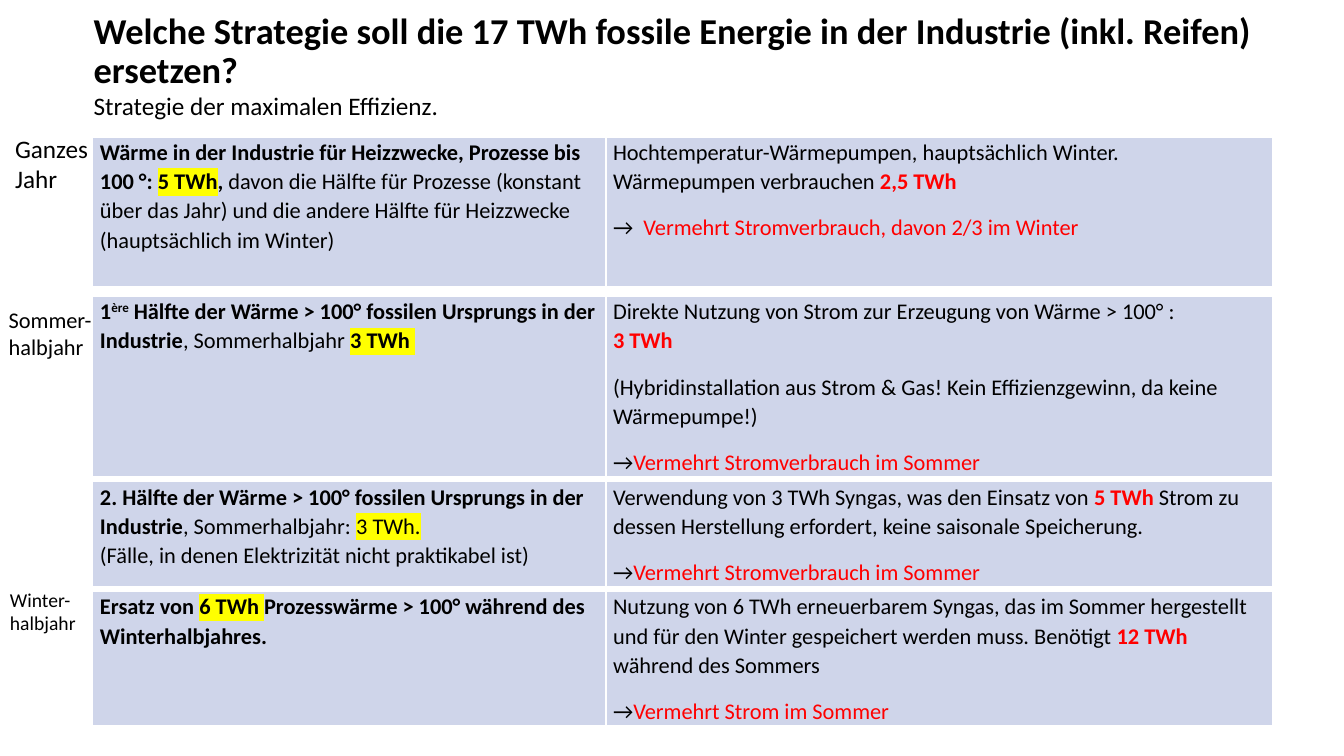
from typing import NamedTuple

from lxml.etree import SubElement as Sub
from pptx import Presentation
from pptx.dml.color import RGBColor as Rgb
from pptx.enum.text import MSO_ANCHOR as Anchor, MSO_AUTO_SIZE as Auto
from pptx.oxml.ns import qn
from pptx.util import Cm, Pt

FONT = "Calibri"
COLORS = {"text": "000000", "accent": "FF0000", "mark": "FFFF00",
          "cell": "CFD5EA", "line": "FFFFFF"}
LEFT = 2.34
WIDTHS = (12.93, 16.79)


class Label(NamedTuple):
    text: str
    left: float
    top: float
    width: float
    height: float
    size: int
    title: bool = False


class Part(NamedTuple):
    text: str
    bold: bool = False
    red: bool = False
    mark: bool = False
    raised: bool = False


class Block(NamedTuple):
    top: float
    height: float
    row: float
    cells: tuple


def arrow(text: str, sign: str = "→") -> list:
    return [Part(sign), Part(text, red=True)]


LABELS = [
    Label("Welche Strategie soll die 17 TWh fossile Energie in der Industrie "
          "(inkl. Reifen) ersetzen?", 2.11, 0.66, 30.76, 1.3, 26, True),
    Label("Strategie der maximalen Effizienz.", 2.11, 2.16, 27.58, 1.02, 18),
    Label("Ganzes\vJahr", 0.13, 3.23, 2.51, 1.8, 18),
    Label("Sommer-halbjahr", -0.03, 7.59, 2.67, 1.63, 16),
    Label("Winter-halbjahr", 0, 14.68, 2.21, 1.45, 14),
]

BLOCKS = [
    Block(3.45, 3.76, 3.76, (
        [[Part("Wärme in der Industrie für Heizzwecke, Prozesse bis 100 °: ", bold=True),
          Part("5 TWh", bold=True, mark=True),
          Part(", ", bold=True),
          Part("davon die Hälfte für Prozesse (konstant über das Jahr) und die "
               "andere Hälfte für Heizzwecke (hauptsächlich im Winter)")]],
        [[Part("Hochtemperatur-Wärmepumpen, hauptsächlich Winter. "
               "Wärmepumpen verbrauchen "),
          Part("2,5 TWh", bold=True, red=True)],
         arrow("Vermehrt Stromverbrauch, davon 2/3 im Winter", "→  ")])),
    Block(7.47, 5.56, 3.58, (
        [[Part("1", bold=True),
          Part("ère", bold=True, raised=True),
          Part(" Hälfte der Wärme > 100° fossilen Ursprungs in der Industrie", bold=True),
          Part(", Sommerhalbjahr "),
          Part("3 TWh ", bold=True, mark=True)]],
        [[Part("Direkte Nutzung von Strom zur Erzeugung von Wärme > 100° : \n"),
          Part("3 TWh", bold=True, red=True)],
         [Part("(Hybridinstallation aus Strom & Gas! Kein Effizienzgewinn, "
               "da keine Wärmepumpe!)")],
         arrow("Vermehrt Stromverbrauch im Sommer")])),
    Block(12.14, 2.57, 2.13, (
        [[Part("2. Hälfte der Wärme > 100° fossilen Ursprungs in der Industrie", bold=True),
          Part(", Sommerhalbjahr: "),
          Part("3 TWh.\n", mark=True),
          Part("(Fälle, in denen Elektrizität nicht praktikabel ist)")]],
        [[Part("Verwendung von 3 TWh Syngas, was den Einsatz von "),
          Part("5 TWh ", bold=True, red=True),
          Part("Strom zu dessen Herstellung erfordert, keine saisonale Speicherung.")],
         arrow("Vermehrt Stromverbrauch im Sommer")])),
    Block(14.91, 3.28, 2.9, (
        [[Part("Ersatz von ", bold=True),
          Part("6 TWh ", bold=True, mark=True),
          Part("Prozesswärme > 100° während des Winterhalbjahres.", bold=True)]],
        [[Part("Nutzung von 6 TWh erneuerbarem Syngas, das im Sommer hergestellt "
               "und für den Winter gespeichert werden muss. Benötigt "),
          Part("12 TWh ", bold=True, red=True),
          Part("während des Sommers")],
         arrow("Vermehrt Strom im Sommer")])),
]


def style(run, size: int, bold: bool = False, color: str = "text") -> None:
    font = run.font
    font.name, font.size, font.bold = FONT, Pt(size), bold
    font.color.rgb = Rgb.from_string(COLORS[color])


def add_label(slide, label: Label) -> None:
    box = slide.shapes.add_textbox(Cm(label.left), Cm(label.top),
                                   Cm(label.width), Cm(label.height))
    frame = box.text_frame
    frame.word_wrap = True
    frame.text = label.text
    para = frame.paragraphs[0]
    if label.title:
        frame.vertical_anchor = Anchor.MIDDLE
        para.line_spacing = 0.9
    else:
        frame.auto_size = Auto.SHAPE_TO_FIT_TEXT
    for run in para.runs:
        style(run, label.size, label.title)


def add_part(para, part: Part) -> None:
    run = para.add_run()
    run.text = part.text.rstrip("\n")
    style(run, 16, part.bold, "accent" if part.red else "text")
    props = run.font._element
    if part.mark:
        mark = Sub(props, qn("a:highlight"))
        Sub(mark, qn("a:srgbClr"), val=COLORS["mark"])
        props.find(qn("a:solidFill")).addnext(mark)
    if part.raised:
        props.set("baseline", "30000")
    if part.text.endswith("\n"):
        para.add_line_break()


def add_edges(cell) -> None:
    props = cell._tc.get_or_add_tcPr()
    for spot, side in enumerate(("lnL", "lnR", "lnT", "lnB")):
        edge = Sub(props, qn(f"a:{side}"), w=str(Pt(1)))
        fill = Sub(edge, qn("a:solidFill"))
        Sub(fill, qn("a:srgbClr"), val=COLORS["line"])
        props.insert(spot, edge)


def fill_cell(cell, paras: list) -> None:
    cell.margin_left = cell.margin_right = Cm(0.18)
    cell.margin_top = cell.margin_bottom = 0
    cell.fill.solid()
    cell.fill.fore_color.rgb = Rgb.from_string(COLORS["cell"])
    add_edges(cell)
    frame = cell.text_frame
    for spot, parts in enumerate(paras):
        para = frame.add_paragraph() if spot else frame.paragraphs[0]
        para.line_spacing = 1.07
        para.space_after = Pt(12)
        for part in parts:
            add_part(para, part)


def add_block(slide, block: Block) -> None:
    shape = slide.shapes.add_table(1, len(WIDTHS), Cm(LEFT), Cm(block.top),
                                   Cm(sum(WIDTHS)), Cm(block.height))
    table = shape.table
    table.first_row = table.horz_banding = False
    table.rows[0].height = Cm(block.row)
    shape.height = Cm(block.height)
    for spot, (width, paras) in enumerate(zip(WIDTHS, block.cells)):
        table.columns[spot].width = Cm(width)
        fill_cell(table.cell(0, spot), paras)


def main() -> None:
    deck = Presentation()
    deck.slide_width, deck.slide_height = Cm(33.87), Cm(19.05)
    slide = deck.slides.add_slide(deck.slide_layouts[6])
    for block in BLOCKS:
        add_block(slide, block)
    for label in LABELS:
        add_label(slide, label)
    deck.save("out.pptx")


if __name__ == "__main__":
    main()
